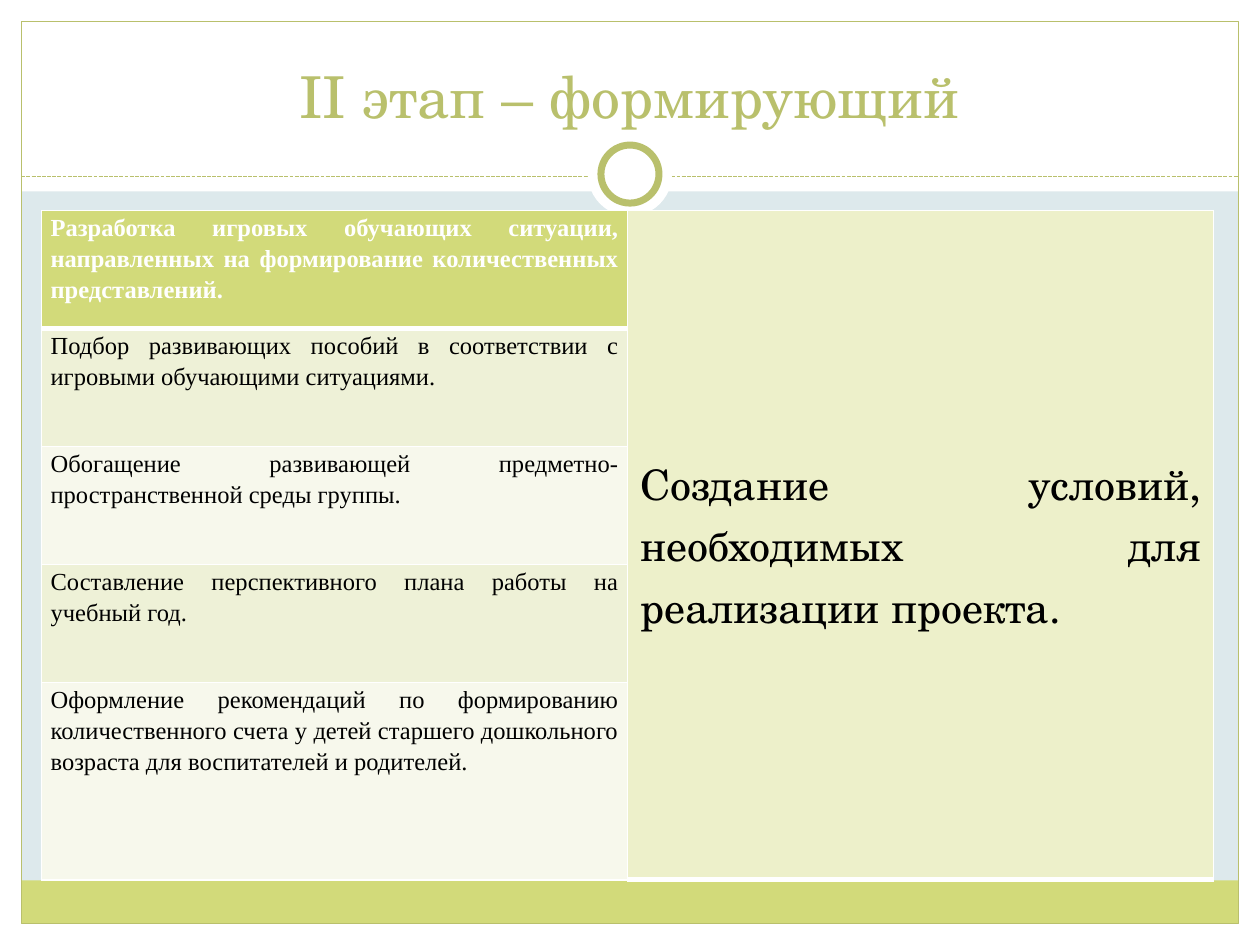
from dataclasses import dataclass

from lxml import etree
from pptx import Presentation
from pptx import util as u
from pptx.dml.color import RGBColor
from pptx.enum import dml, shapes, text
from pptx.oxml.ns import qn

RECT, OVAL = shapes.MSO_SHAPE.RECTANGLE, shapes.MSO_SHAPE.OVAL
WIDTH, HEIGHT, MARGIN = 25.4, 19.05, 0.43

TITLE = "II этап – формирующий"
GOAL = "Создание условий, необходимых для реализации проекта."
TASKS = [
    "Разработка игровых обучающих ситуации, направленных на формирование количественных представлений.",
    "Подбор развивающих пособий в соответствии с игровыми обучающими ситуациями.",
    "Обогащение развивающей предметно-пространственной среды группы.",
    "Составление перспективного плана работы на учебный год.",
    "Оформление рекомендаций по формированию количественного счета у детей старшего дошкольного возраста для воспитателей и родителей.",
]


@dataclass(frozen=True)
class Theme:
    back: str = "DDE9EC"
    white: str = "FFFFFF"
    black: str = "000000"
    accent: str = "D2DA7A"
    line: str = "B9C06C"
    goal: str = "EDF0CA"
    bands: tuple = ("F7F8EC", "EEF1D7")
    head_font: str = "TeX Gyre Schola"
    body_font: str = "Times New Roman"
    title_size: int = 33
    goal_size: int = 24
    task_size: int = 14


def rgb(value):
    return RGBColor.from_string(value)


def write(tf, content, font, size, color, bold=False, align=text.PP_ALIGN.JUSTIFY, spacing=1.0):
    p = tf.paragraphs[0]
    p.alignment, p.line_spacing = align, spacing
    r = p.add_run()
    r.text = content
    r.font.name, r.font.size, r.font.bold = font, u.Pt(size), bold
    r.font.color.rgb = rgb(color)


class Deck:
    """Holds the theme and the current slide and draws its elements."""

    def __init__(self, theme):
        self.theme = theme
        self.prs = Presentation()
        self.prs.slide_width, self.prs.slide_height = u.Cm(WIDTH), u.Cm(HEIGHT)
        self.s = self.prs.slides.add_slide(self.prs.slide_layouts[5])
        fill = self.s.background.fill
        fill.solid()
        fill.fore_color.rgb = rgb(theme.back)

    def shape(self, kind, x, y, w, h, fill=None, line=None, weight=0.75):
        sp = self.s.shapes.add_shape(kind, u.Cm(x), u.Cm(y), u.Cm(w), u.Cm(h))
        sp.shadow.inherit = False
        if fill:
            sp.fill.solid()
            sp.fill.fore_color.rgb = rgb(fill)
        else:
            sp.fill.background()
        if line:
            sp.line.color.rgb, sp.line.width = rgb(line), u.Pt(weight)
        else:
            sp.line.fill.background()

    def circle(self, cx, cy, d, **style):
        self.shape(OVAL, cx - d / 2, cy - d / 2, d, d, **style)

    def rule(self, x1, x2, y):
        cn = self.s.shapes.add_connector(
            shapes.MSO_CONNECTOR.STRAIGHT, u.Cm(x1), u.Cm(y), u.Cm(x2), u.Cm(y))
        cn.line.color.rgb, cn.line.width = rgb(self.theme.line), u.Pt(0.75)
        cn.line.dash_style = dml.MSO_LINE.SQUARE_DOT
        etree.SubElement(cn._element.spPr, qn("a:effectLst"))

    def title(self, content, x, y, w, h):
        t, sp = self.theme, self.s.shapes.title
        self.s.shapes._spTree.append(sp._element)
        sp.left, sp.top, sp.width, sp.height = u.Cm(x), u.Cm(y), u.Cm(w), u.Cm(h)
        tf = sp.text_frame
        tf.auto_size = text.MSO_AUTO_SIZE.NONE
        tf.vertical_anchor = text.MSO_ANCHOR.BOTTOM
        write(tf, content, t.head_font, t.title_size, t.line, align=text.PP_ALIGN.CENTER)

    def cell(self, cell, fill, top=1, bottom=1):
        tcPr = cell._tc.get_or_add_tcPr()
        for side, weight in (("L", 1), ("R", 1), ("T", top), ("B", bottom)):
            ln = etree.SubElement(tcPr, qn(f"a:ln{side}"), w=str(u.Pt(weight)))
            solid = etree.SubElement(ln, qn("a:solidFill"))
            etree.SubElement(solid, qn("a:srgbClr"), val=self.theme.white)
        cell.fill.solid()
        cell.fill.fore_color.rgb = rgb(fill)

    def table(self, tasks, goal, x, y, w, row_heights):
        t = self.theme
        frame = self.s.shapes.add_table(
            len(tasks), 2, u.Cm(x), u.Cm(y), u.Cm(w), u.Cm(sum(row_heights)))
        table = frame.table
        for i, (task, height) in enumerate(zip(tasks, row_heights)):
            table.rows[i].height = u.Cm(height)
            head = i == 0
            left, right = table.cell(i, 0), table.cell(i, 1)
            left.margin_left = left.margin_right = u.Cm(0.18)
            left.margin_top = left.margin_bottom = 0
            write(left.text_frame, task, t.body_font, t.task_size,
                  t.white if head else t.black, bold=head, spacing=1.15)
            self.cell(left, t.accent if head else t.bands[i % 2],
                      top=3 if i == 1 else 1, bottom=3 if head else 1)
            self.cell(right, t.goal, bottom=3)
        merged = table.cell(0, 1)
        merged.merge(table.cell(len(tasks) - 1, 1))
        merged.vertical_anchor = text.MSO_ANCHOR.MIDDLE
        write(merged.text_frame, goal, t.head_font, t.goal_size, t.black)


def main():
    t = Theme()
    deck = Deck(t)
    inner = WIDTH - 2 * MARGIN
    for box in ((0, HEIGHT - MARGIN, WIDTH, MARGIN), (0, 0, WIDTH, 3.86),
                (0, 0, MARGIN, HEIGHT), (WIDTH - MARGIN, 0, MARGIN, HEIGHT)):
        deck.shape(RECT, *box, fill=t.white)
    deck.shape(RECT, MARGIN, 17.75, inner, 0.86, fill=t.accent)
    deck.shape(RECT, MARGIN, MARGIN, inner, HEIGHT - 2 * MARGIN, line=t.line)
    deck.rule(MARGIN, WIDTH - MARGIN, 3.56)
    deck.circle(WIDTH / 2, 3.51, 1.7, fill=t.white)
    deck.circle(WIDTH / 2, 3.51, 1.17, fill=t.white, line=t.line, weight=4)
    deck.title(TITLE, 0.84, 0.64, 23.7, 2.11)
    deck.table(TASKS, GOAL, 0.84, 4.24, 23.62, [2.38] * 4 + [3.96])
    deck.prs.save("out.pptx")


if __name__ == "__main__":
    main()
